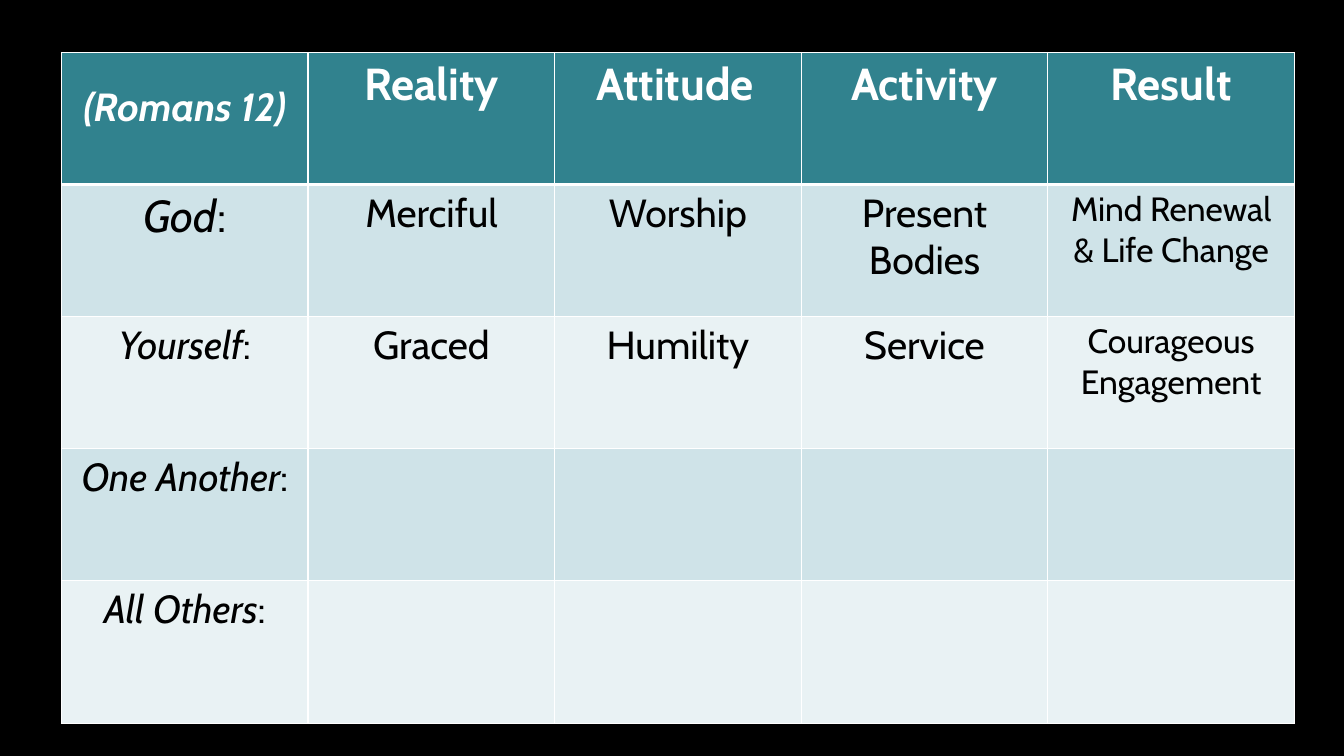
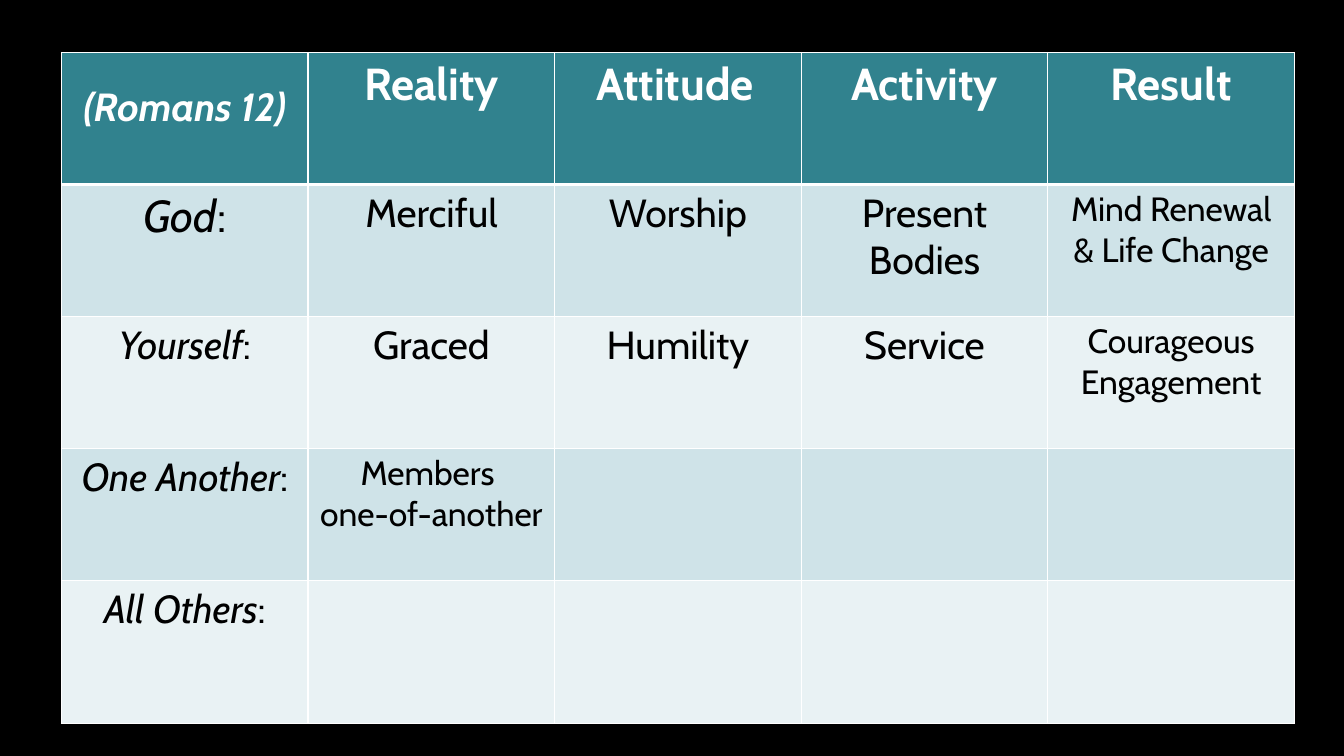
from lxml.etree import SubElement
from pptx import Presentation
from pptx.dml.color import RGBColor
from pptx.enum.text import PP_ALIGN as Align
from pptx.oxml.ns import qn
from pptx.util import Inches, Pt

COLORS = {
    "background": "000000",
    "header": "31828E",
    "odd_row": "CFE3E8",
    "even_row": "E9F2F4",
    "border": "FFFFFF",
    "header_text": "FFFFFF",
    "body_text": "000000",
}
FONT = "Cabin"
LEFT, TOP = 0.61, 0.52
COLUMN_WIDTH = 12.23 / 5
ROW_HEIGHTS = [1.31] * 4 + [1.42]
HEADER_SIZE, BODY_SIZE, SMALL_SIZE = 32, 28, 24

CORNER = "(Romans 12)"
CORNER_TOP_MARGIN = 0.31
HEADINGS = ["Reality", "Attitude", "Activity", "Result"]
RELATIONS = {
    "God": ["Merciful", "Worship", "Present Bodies", "Mind Renewal & Life Change"],
    "Yourself": ["Graced", "Humility", "Service", "Courageous Engagement"],
    "One Another": [],
    "All Others": [],
}
LABEL_SIZES = {"God": HEADER_SIZE}
SMALL_ENTRIES = {
    "Mind Renewal & Life Change",
    "Courageous Engagement",
    "Members \none-of-another",
}


def add_text(paragraph, text, size=BODY_SIZE, color="body_text", bold=False, italic=False):
    paragraph.alignment = Align.CENTER
    run = paragraph.add_run()
    run.text = text
    font = run.font
    font.name, font.size = FONT, Pt(size)
    font.bold, font.italic = bold, italic
    font.color.rgb = RGBColor.from_string(COLORS[color])


class Deck:
    """Holds the presentation, its style and the current slide."""

    def __init__(self):
        self.prs = Presentation()
        self.prs.slide_width, self.prs.slide_height = Inches(13.33), Inches(7.5)
        self.slide = None

    def new_slide(self):
        self.slide = self.prs.slides.add_slide(self.prs.slide_layouts[6])
        fill = self.slide.background.fill
        fill.solid()
        fill.fore_color.rgb = RGBColor.from_string(COLORS["background"])

    def style_cell(self, cell, fill, top=1, bottom=1):
        """Border widths are in points; borders must precede the fill in the XML."""
        properties = cell._tc.get_or_add_tcPr()
        for side, width in zip("LRTB", (1, 1, top, bottom)):
            line = SubElement(properties, qn(f"a:ln{side}"), w=str(Pt(width)))
            solid = SubElement(line, qn("a:solidFill"))
            SubElement(solid, qn("a:srgbClr"), val=COLORS["border"])
        cell.fill.solid()
        cell.fill.fore_color.rgb = RGBColor.from_string(COLORS[fill])

    def header_row(self, cells):
        corner, *heading_cells = cells
        corner.margin_top = Inches(CORNER_TOP_MARGIN)
        style = dict(color="header_text", bold=True)
        add_text(corner.text_frame.paragraphs[0], CORNER, italic=True, **style)
        for cell, heading in zip(heading_cells, HEADINGS):
            paragraph = cell.text_frame.paragraphs[0]
            add_text(paragraph, heading, size=HEADER_SIZE, **style)
            if heading == "Attitude":
                add_text(paragraph, " ", size=18, **style)

    def relation_row(self, cells, relation, entries):
        label_cell, *entry_cells = cells
        label = label_cell.text_frame.paragraphs[0]
        size = LABEL_SIZES.get(relation, BODY_SIZE)
        add_text(label, relation, size=size, italic=True)
        add_text(label, ":", size=size)
        for cell, entry in zip(entry_cells, entries):
            size = SMALL_SIZE if entry in SMALL_ENTRIES else BODY_SIZE
            frame = cell.text_frame
            for index, line in enumerate(entry.split("\n")):
                paragraph = frame.add_paragraph() if index else frame.paragraphs[0]
                add_text(paragraph, line, size=size)

    def relations_table(self, relations):
        columns = len(HEADINGS) + 1
        table = self.slide.shapes.add_table(
            len(ROW_HEIGHTS), columns, Inches(LEFT), Inches(TOP),
            Inches(COLUMN_WIDTH * columns), Inches(sum(ROW_HEIGHTS))).table
        table.first_row = table.horz_banding = False
        for column in table.columns:
            column.width = Inches(COLUMN_WIDTH)
        for index, (row, height) in enumerate(zip(table.rows, ROW_HEIGHTS)):
            row.height = Inches(height)
            fill = "header" if index == 0 else "odd_row" if index % 2 else "even_row"
            for cell in row.cells:
                self.style_cell(cell, fill, top=3 if index == 1 else 1,
                                bottom=3 if index == 0 else 1)
        header, *body = table.rows
        self.header_row(header.cells)
        for row, (relation, entries) in zip(body, relations.items()):
            self.relation_row(row.cells, relation, entries)


def main():
    deck = Deck()
    for one_another in ([], ["Members \none-of-another"]):
        deck.new_slide()
        deck.relations_table({**RELATIONS, "One Another": one_another})
    deck.prs.save("out.pptx")


if __name__ == "__main__":
    main()
